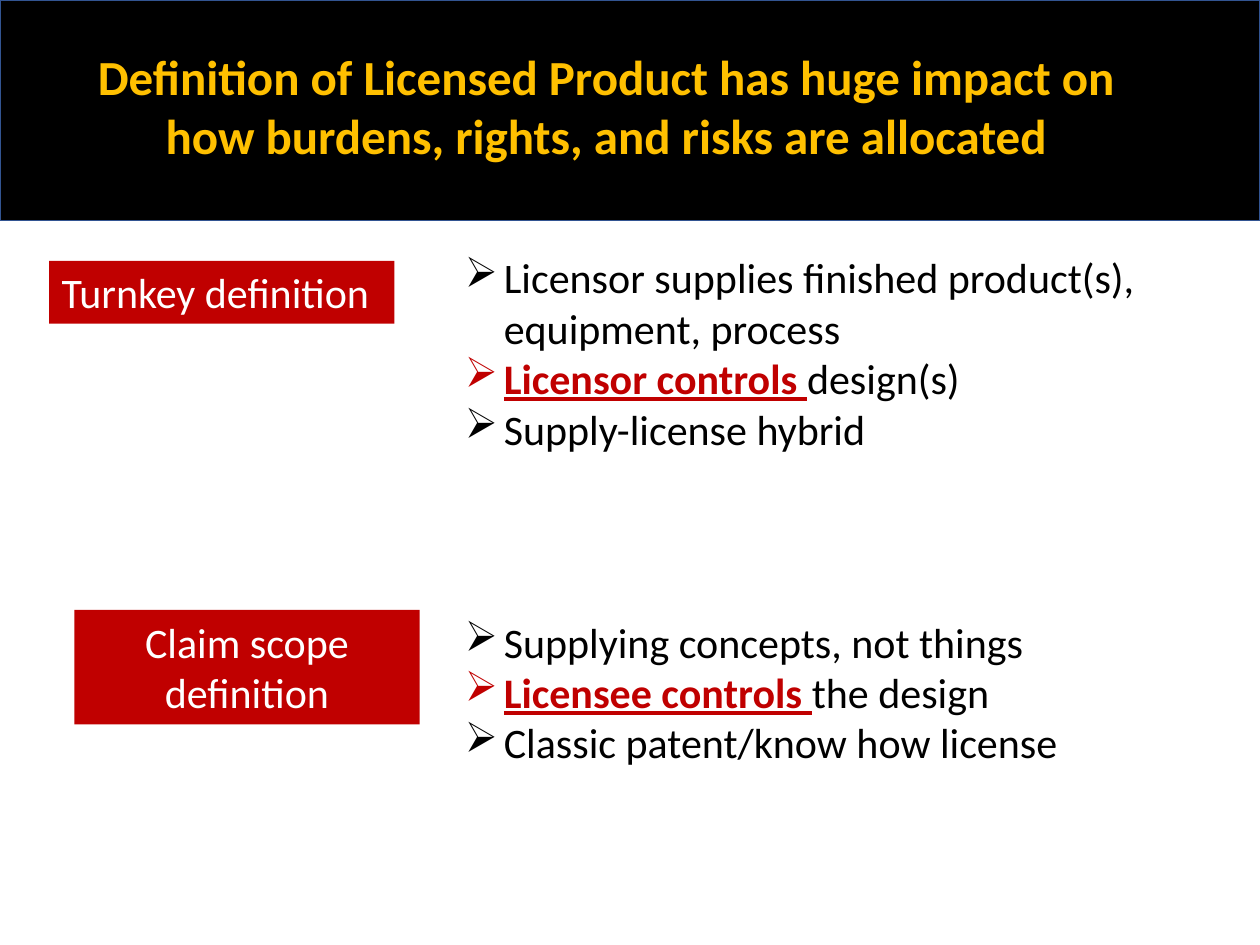
from dataclasses import dataclass

from lxml import etree
from pptx import Presentation
from pptx import util as u
from pptx.dml.color import RGBColor
from pptx.enum import shapes, text
from pptx.oxml.ns import qn


@dataclass(frozen=True)
class Theme:
    font: str = "Calibri"
    black: str = "000000"
    white: str = "FFFFFF"
    red: str = "C00000"
    gold: str = "FFC000"
    edge: str = "325491"
    head: int = 28
    body: int = 24


theme = Theme()
left, center = text.PP_ALIGN.LEFT, text.PP_ALIGN.CENTER

title = "Definition of Licensed Product has huge impact on how burdens, rights, and risks are allocated"
banner = (0, 0, 10, 1.75)
title_box = (0.5, 0.32, 8.62, 1.04)
indent = 0.31

topics = [
    {
        "label": "Turnkey definition",
        "align": left,
        "tag": (0.39, 2.07, 2.74, 0.5),
        "list": (3.59, 1.95, 5.82, 2.12),
        "points": [
            ("", "Licensor supplies finished product(s), equipment, process"),
            ("Licensor controls ", "design(s)"),
            ("", "Supply-license hybrid"),
        ],
    },
    {
        "label": "Claim scope definition",
        "align": center,
        "tag": (0.59, 4.84, 2.74, 0.91),
        "list": (3.59, 4.84, 5.02, 1.31),
        "points": [
            ("", "Supplying concepts, not things"),
            ("Licensee controls ", "the design"),
            ("", "Classic patent/know how license"),
        ],
    },
]


def add_run(para, words, color, size=theme.body, bold=False, under=False):
    run = para.add_run()
    run.text = words
    font = run.font
    font.name, font.size = theme.font, u.Pt(size)
    font.bold, font.underline = bold, under
    font.color.rgb = RGBColor.from_string(color)


def add_rect(slide, box, fill, edge=None):
    rect = slide.shapes.add_shape(shapes.MSO_SHAPE.RECTANGLE, *map(u.Inches, box))
    rect.shadow.inherit = False
    rect.fill.solid()
    rect.fill.fore_color.rgb = RGBColor.from_string(fill)
    if edge:
        rect.line.color.rgb = RGBColor.from_string(edge)
        rect.line.width = u.Pt(1)
    else:
        rect.line.fill.background()
    return rect


def add_text(slide, box):
    frame = slide.shapes.add_textbox(*map(u.Inches, box)).text_frame
    frame.word_wrap = True
    return frame


def add_bullet(para):
    props = para._p.get_or_add_pPr()
    props.set("marL", str(u.Inches(indent)))
    props.set("indent", str(-u.Inches(indent)))
    etree.SubElement(props, qn("a:buChar")).set("char", "➢")


def add_tag(slide, topic):
    frame = add_rect(slide, topic["tag"], theme.red).text_frame
    frame.word_wrap = True
    frame.vertical_anchor = text.MSO_ANCHOR.TOP
    para = frame.paragraphs[0]
    para.alignment = topic["align"]
    add_run(para, topic["label"], theme.white)


def add_list(slide, topic):
    frame = add_text(slide, topic["list"])
    for i, (stress, rest) in enumerate(topic["points"]):
        para = frame.add_paragraph() if i else frame.paragraphs[0]
        add_bullet(para)
        if stress:
            add_run(para, stress, theme.red, bold=True, under=True)
        add_run(para, rest, theme.black)


def main():
    deck = Presentation()
    deck.slide_width, deck.slide_height = u.Inches(10), u.Inches(7.5)
    slide = deck.slides.add_slide(deck.slide_layouts[6])

    add_rect(slide, banner, theme.black, theme.edge)
    para = add_text(slide, title_box).paragraphs[0]
    para.alignment = center
    add_run(para, title, theme.gold, theme.head, bold=True)

    for topic in topics:
        add_tag(slide, topic)
        add_list(slide, topic)

    deck.save("out.pptx")


if __name__ == "__main__":
    main()
